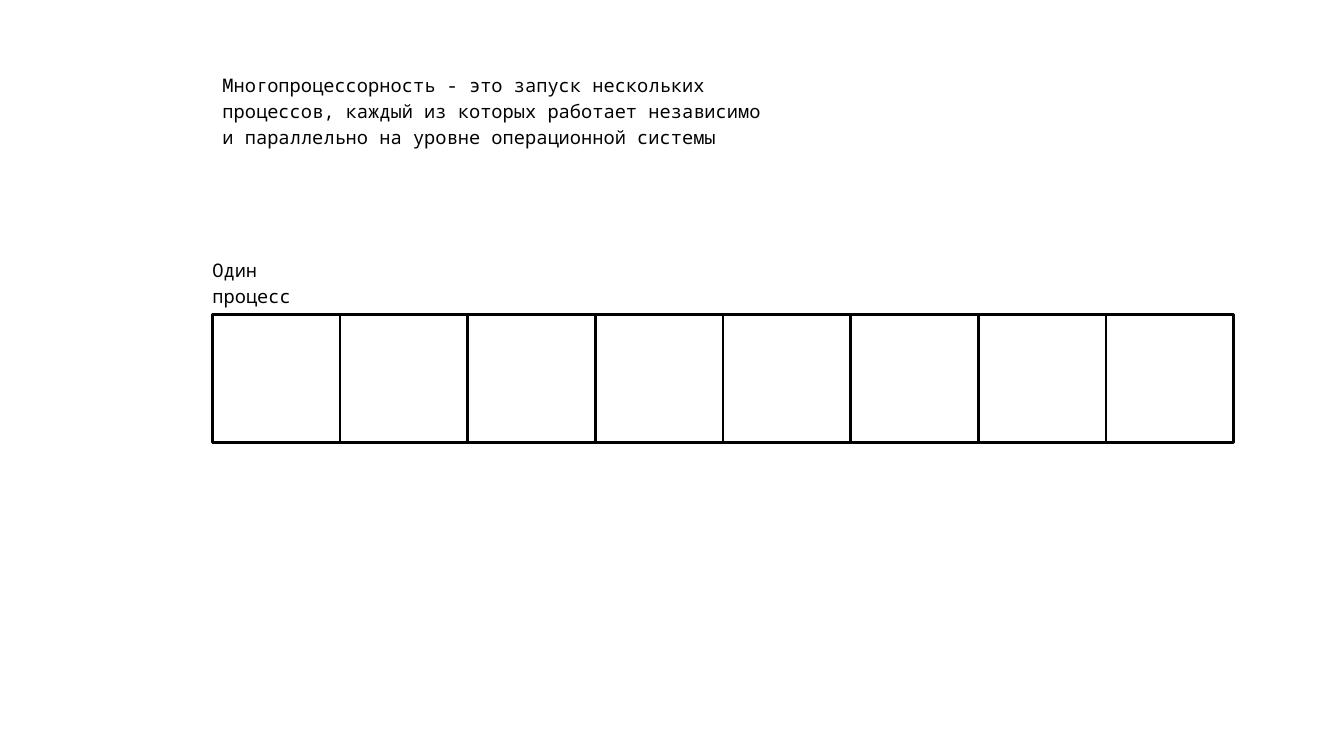
from dataclasses import dataclass

from pptx import Presentation
from pptx.dml.color import RGBColor
from pptx.enum.shapes import MSO_SHAPE
from pptx.enum.text import MSO_AUTO_SIZE
from pptx.slide import Slide
from pptx.util import Emu, Pt

SCALE = 9144  # EMU in one px, 100 px to the inch
BLACK = RGBColor(0x00, 0x00, 0x00)
WHITE = RGBColor(0xFF, 0xFF, 0xFF)
FONT = "Noto Sans Mono"

# Row of cells
COUNT = 8
SIDE = 190
LEFT = 316
TOP = 468


@dataclass
class Note:
    x: int
    y: int
    w: int
    h: int
    text: str


NOTES = [
    Note(331, 104, 802, 118,
         "Многопроцессорность - это запуск нескольких процессов, "
         "каждый из которых работает независимо и параллельно "
         "на уровне операционной системы"),
    Note(LEFT, 380, 199, 78, "Один процесс"),
]


def px(size: int) -> Emu:
    return Emu(size * SCALE)


def add_note(slide: Slide, note: Note) -> None:
    box = slide.shapes.add_textbox(px(note.x), px(note.y), px(note.w), px(note.h))
    frame = box.text_frame
    frame.word_wrap = True
    frame.auto_size = MSO_AUTO_SIZE.SHAPE_TO_FIT_TEXT
    frame.margin_left = frame.margin_right = 0
    frame.margin_top = frame.margin_bottom = 0
    para = frame.paragraphs[0]
    para.line_spacing = Pt(28)
    run = para.add_run()
    run.text = note.text
    run.font.name = FONT
    run.font.size = Pt(20)
    run.font.color.rgb = BLACK


def add_cell(slide: Slide, x: int, y: int) -> None:
    cell = slide.shapes.add_shape(
        MSO_SHAPE.RECTANGLE, px(x), px(y), px(SIDE), px(SIDE))
    cell.shadow.inherit = False
    cell.fill.solid()
    cell.fill.fore_color.rgb = WHITE
    cell.line.color.rgb = BLACK
    cell.line.width = Pt(3)


def main() -> None:
    deck = Presentation()
    deck.slide_width = px(2000)
    deck.slide_height = px(1125)
    slide = deck.slides.add_slide(deck.slide_layouts[6])

    # Process cells, side by side
    for i in range(COUNT):
        add_cell(slide, LEFT + i * SIDE, TOP)

    # Definition and row label
    for note in NOTES:
        add_note(slide, note)

    deck.save("out.pptx")


if __name__ == "__main__":
    main()
